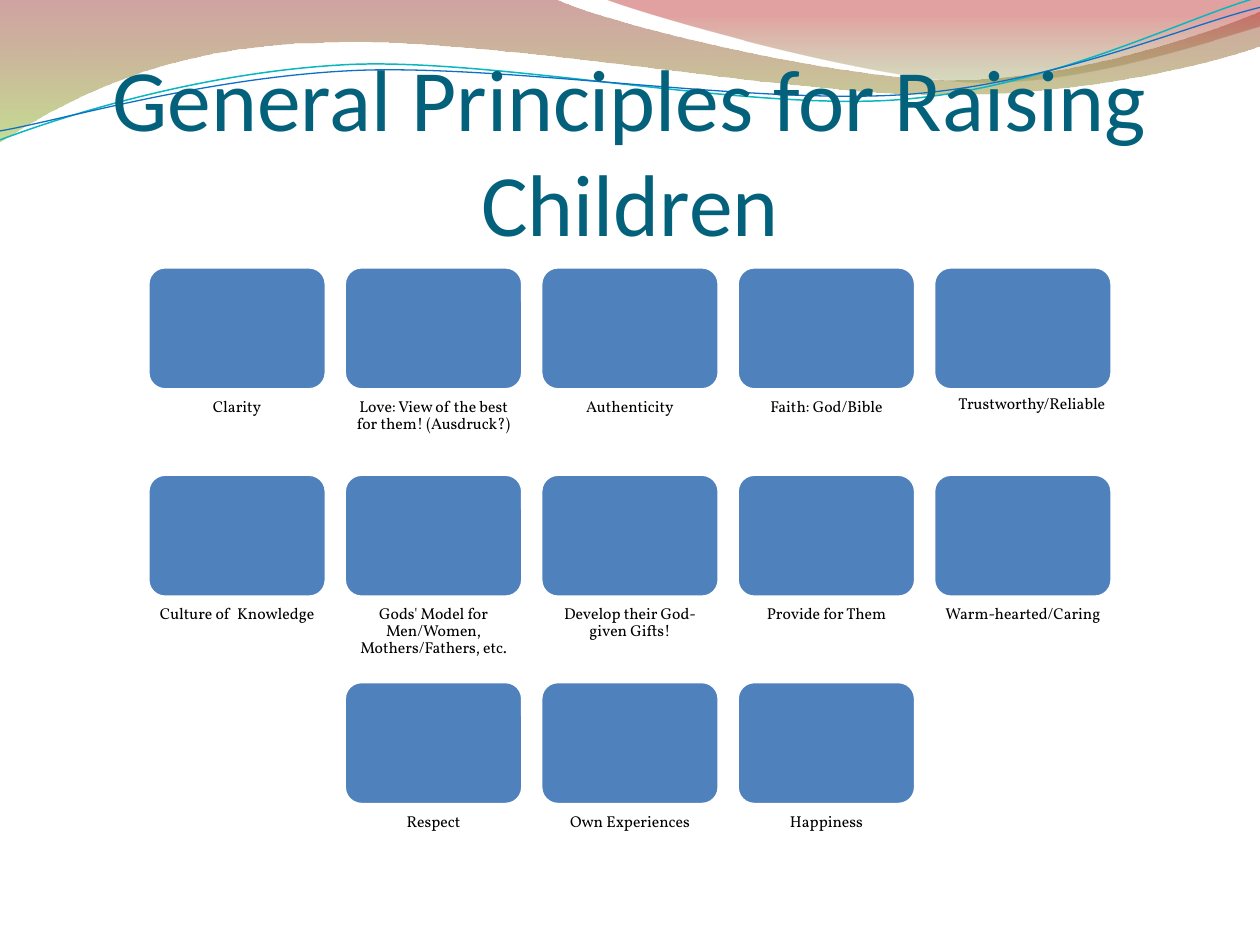
from dataclasses import dataclass
from math import cos, radians, sin
from typing import Any, NamedTuple

from lxml import etree
from pptx import Presentation
from pptx.dml.color import RGBColor
from pptx.enum.shapes import MSO_SHAPE
from pptx.enum.text import MSO_ANCHOR, MSO_AUTO_SIZE, PP_ALIGN
from pptx.oxml.ns import qn
from pptx.util import Cm, Pt

ROUND = MSO_SHAPE.ROUNDED_RECTANGLE
TOP, BOTTOM = MSO_ANCHOR.TOP, MSO_ANCHOR.BOTTOM
CENTER = PP_ALIGN.CENTER
NO_FIT = MSO_AUTO_SIZE.NONE


@dataclass(frozen=True)
class Theme:
    title: str = "04617B"
    text: str = "000000"
    card: str = "4F81BD"
    edge: str = "FFFFFF"
    head_font: str = "Calibri"
    body_font: str = "Vollkorn"
    head_size: float = 50
    body_size: float = 9
    edge_width: float = 2


class Stop(NamedTuple):
    place: float
    color: str
    alpha: int


@dataclass(frozen=True)
class Band:
    """Filled ribbon; each step is a line (2 numbers) or a curve (6)."""
    start: tuple
    steps: tuple
    stops: tuple
    angle: int


@dataclass(frozen=True)
class Wave:
    """Open curve, tilted about its pivot."""
    start: tuple
    steps: tuple
    pivot: tuple
    color: str
    width: float


class Card(NamedTuple):
    label: str
    dx: float = 0
    dy: float = 0


THEME = Theme()
TILT = -2.7

BANDS = (
    Band((0, 0),
         ((11.18, -0.03),
          (12.09, 0.43, 16.84, 1.6, 19.25, 1.6),
          (21.67, 1.6, 24.33, 0.66, 25.4, 0.23),
          (25.43, 0.91),
          (24.97, 1.12, 22.07, 1.93, 18.95, 1.91),
          (15.8, 1.91, 9.7, 0.71, 6.53, 0.86),
          (3.25, 0.89, 1.17, 2.11, -0.03, 2.87)),
         (Stop(0, "973330", 45), Stop(1, "95C238", 55)), 270),
    Band((12.17, -0.03),
         ((12.93, 0.28, 17.32, 1.55, 19.53, 1.65),
          (21.72, 1.75, 24.41, 0.81, 25.4, 0.53),
          (25.4, 0)),
         (Stop(0, "769537", 30), Stop(0.8, "BE3330", 45)), 90),
)
WAVES = (
    Wave((0, 2.82),
         ((1.22, 2.36, 4.01, 1.45, 7.04, 1.3),
          (10.03, 1.17, 15.04, 2.24, 18.11, 2.01),
          (21.16, 1.78, 23.83, 0.38, 25.35, -0.05)),
         (12.67, 1.46), "09B7BF", 0.85),
    Wave((0, 2.64),
         ((1.19, 2.44, 4.17, 1.55, 7.19, 1.42),
          (10.21, 1.3, 15.16, 2.11, 18.21, 1.91),
          (21.23, 1.7, 23.9, 0.51, 25.4, 0.15)),
         (12.69, 1.5), "0F6FC6", 0.75),
)
ROWS = (
    (Card("Clarity"),
     Card("Love: View of the best for them! (Ausdruck?)"),
     Card("Authenticity"),
     Card("Faith: God/Bible"),
     Card("Trustworthy/Reliable", 0.18, -0.06)),
    (Card("Culture of  Knowledge"),
     Card("Gods' Model for Men/Women, Mothers/Fathers, etc."),
     Card("Develop their God-given Gifts!"),
     Card("Provide for Them"),
     Card("Warm-hearted/Caring")),
    (Card("Respect"), Card("Own Experiences"), Card("Happiness")),
)
MID, UPPER = 12.7, 5.38
STEP_X, STEP_Y = 3.96, 4.18
CARD_W, CARD_H, LABEL_H = 3.6, 2.48, 1.32
PAD = 0.18


def style(item: Any, form: dict) -> None:
    for name, value in form.items():
        setattr(item, name, value)


def turn(dot: tuple, pivot: tuple, angle: float) -> tuple:
    a = radians(angle)
    x, y = dot[0] - pivot[0], dot[1] - pivot[1]
    return (pivot[0] + x * cos(a) - y * sin(a),
            pivot[1] + x * sin(a) + y * cos(a))


def bend(shape: Any, steps: tuple) -> None:
    """Join each three lines that stand for a curve into one cubic curve."""
    lines = iter(list(shape.element.iter(qn("a:lnTo"))))
    for step in steps:
        group = [next(lines) for _ in range(len(step) // 2)]
        if len(group) == 3:
            curve = etree.Element(qn("a:cubicBezTo"))
            group[0].addprevious(curve)
            for line in group:
                curve.append(line[0])
                line.getparent().remove(line)


def draw_path(shapes: Any, start: tuple, steps: tuple, close: bool,
              pivot: tuple = (0, 0), tilt: float = 0) -> Any:
    dots = [start] + [step[i:i + 2] for step in steps
                      for i in range(0, len(step), 2)]
    dots = [tuple(Cm(v) for v in turn(dot, pivot, -tilt)) for dot in dots]
    pen = shapes.build_freeform(*dots[0])
    pen.add_line_segments(dots[1:], close=close)
    shape = pen.convert_to_shape()
    bend(shape, steps)
    shape.rotation = tilt
    shape.shadow.inherit = False
    return shape


def draw_band(shapes: Any, band: Band) -> None:
    shape = draw_path(shapes, band.start, band.steps, True)
    shape.line.fill.background()
    fill = shape.fill
    fill.gradient()
    fill.gradient_angle = band.angle
    for mark, stop in zip(fill.gradient_stops, band.stops):
        mark.position = stop.place
        mark.color.rgb = RGBColor.from_string(stop.color)
    for node, stop in zip(shape.element.iter(qn("a:gs")), band.stops):
        tint = node.find(qn("a:srgbClr"))
        etree.SubElement(tint, qn("a:alpha"), val=str(stop.alpha * 1000))


def draw_wave(shapes: Any, wave: Wave) -> None:
    shape = draw_path(shapes, wave.start, wave.steps, False, wave.pivot, TILT)
    shape.fill.background()
    shape.line.color.rgb = RGBColor.from_string(wave.color)
    shape.line.width = Pt(wave.width)


def write(shape: Any, text: str, frame: dict, para: dict,
          font: dict, color: str) -> None:
    body = shape.text_frame
    body.text = text
    style(body, {"word_wrap": True, "auto_size": NO_FIT, **frame})
    line = body.paragraphs[0]
    style(line, {"alignment": CENTER, **para})
    style(line.runs[0].font, font)
    line.runs[0].font.color.rgb = RGBColor.from_string(color)


def draw_title(shapes: Any, text: str) -> None:
    title = shapes.title
    shapes.element.append(title.element)  # in front of the waves
    style(title, {"left": Cm(1.27), "top": Cm(1.95),
                  "width": Cm(22.86), "height": Cm(3.17)})
    write(title, text,
          {"vertical_anchor": BOTTOM, "margin_left": 0, "margin_right": 0,
           "margin_top": Cm(0.13), "margin_bottom": 0}, {},
          {"name": THEME.head_font, "size": Pt(THEME.head_size)}, THEME.title)


def draw_card(shapes: Any, card: Card, x: float, y: float) -> None:
    box = shapes.add_shape(ROUND, Cm(x), Cm(y), Cm(CARD_W), Cm(CARD_H))
    box.shadow.inherit = False
    box.adjustments[0] = 0.14
    box.fill.solid()
    box.fill.fore_color.rgb = RGBColor.from_string(THEME.card)
    box.line.color.rgb = RGBColor.from_string(THEME.edge)
    box.line.width = Pt(THEME.edge_width)
    label = shapes.add_textbox(Cm(x + card.dx), Cm(y + CARD_H + card.dy),
                               Cm(CARD_W), Cm(LABEL_H))
    write(label, card.label,
          {"vertical_anchor": TOP, "margin_left": Cm(PAD),
           "margin_right": Cm(PAD), "margin_top": Cm(PAD),
           "margin_bottom": 0}, {"line_spacing": 0.9},
          {"name": THEME.body_font, "size": Pt(THEME.body_size)}, THEME.text)


def main() -> None:
    deck = Presentation()
    style(deck, {"slide_width": Cm(25.4), "slide_height": Cm(19.05)})
    shapes = deck.slides.add_slide(deck.slide_layouts[5]).shapes
    for band in BANDS:
        draw_band(shapes, band)
    for wave in WAVES:
        draw_wave(shapes, wave)
    draw_title(shapes, "General Principles for Raising Children")
    for r, row in enumerate(ROWS):
        left = MID - CARD_W / 2 - (len(row) - 1) / 2 * STEP_X
        for c, card in enumerate(row):
            draw_card(shapes, card, left + c * STEP_X, UPPER + r * STEP_Y)
    deck.save("out.pptx")


if __name__ == "__main__":
    main()
